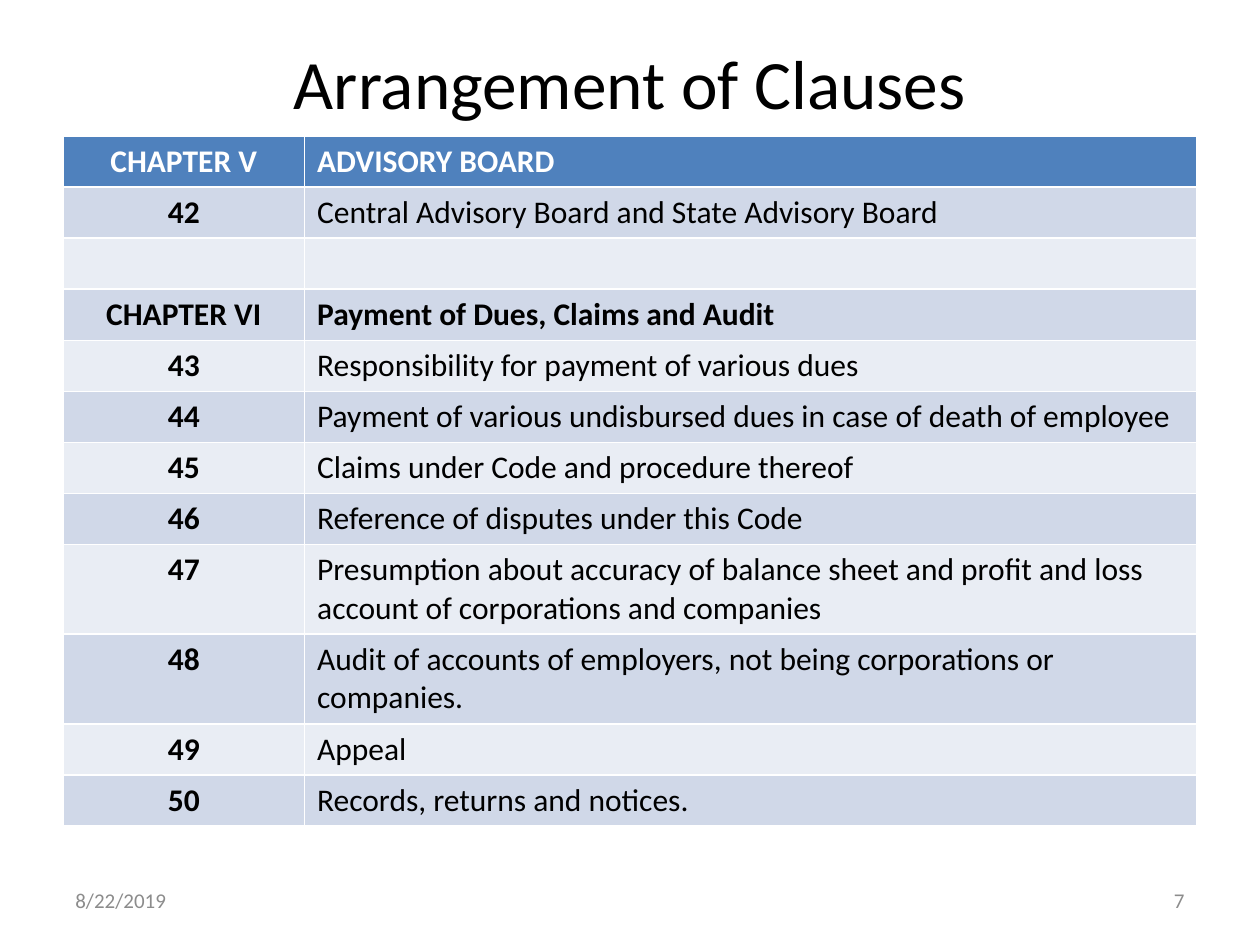
from pptx import Presentation
from pptx.dml.color import RGBColor
from pptx.enum import text
from pptx.util import Cm, Pt

BLACK = RGBColor(0x00, 0x00, 0x00)
WHITE = RGBColor(0xFF, 0xFF, 0xFF)
GREY = RGBColor(0x8C, 0x8C, 0x8C)
BLUE = RGBColor(0x4F, 0x81, 0xBD)
BANDS = RGBColor(0xD0, 0xD8, 0xE8), RGBColor(0xE9, 0xED, 0xF4)

LEFT, WIDTH = Cm(1.27), Cm(22.86)
ALIGN = text.PP_ALIGN

ROWS = [
    ("CHAPTER V", "ADVISORY BOARD"),
    ("42", "Central Advisory Board and State Advisory Board"),
    ("", ""),
    ("CHAPTER VI", "Payment of Dues, Claims and Audit"),
    ("43", "Responsibility for payment of various dues"),
    ("44", "Payment of various undisbursed dues in case of death of employee"),
    ("45", "Claims under Code and procedure thereof"),
    ("46", "Reference of disputes under this Code"),
    ("47", "Presumption about accuracy of balance sheet and profit and loss "
           "account of corporations and companies"),
    ("48", "Audit of accounts of employers, not being corporations or companies."),
    ("49", "Appeal"),
    ("50", "Records, returns and notices."),
]


def write(frame, words, size=18, color=BLACK, bold=False, align=ALIGN.LEFT):
    para = frame.paragraphs[0]
    para.alignment = align
    if not words:
        return
    run = para.add_run()
    run.text = words
    font = run.font
    font.name, font.size, font.bold = "Calibri", Pt(size), bold
    font.color.rgb = color


def add_title(slide, left, top, width, height):
    title = slide.shapes.title
    title.left, title.top, title.width, title.height = left, top, width, height
    title.text_frame.vertical_anchor = text.MSO_ANCHOR.MIDDLE
    write(title.text_frame, "Arrangement of Clauses", size=39.6, align=ALIGN.CENTER)


def add_clauses(slide, left, top, width, row_height):
    table = slide.shapes.add_table(
        len(ROWS), 2, left, top, width, row_height * len(ROWS)).table
    first = Cm(4.87)
    table.columns[0].width, table.columns[1].width = first, width - first
    for i, row in enumerate(ROWS):
        head = i == 0
        chapter = row[0].startswith("CHAPTER")
        for j, words in enumerate(row):
            cell = table.cell(i, j)
            cell.fill.solid()
            cell.fill.fore_color.rgb = BLUE if head else BANDS[(i - 1) % 2]
            write(cell.text_frame, words, color=WHITE if head else BLACK,
                  bold=chapter or j == 0,
                  align=ALIGN.LEFT if j else ALIGN.CENTER)


def add_footer(slide, left, top, width, height):
    part = Cm(5.93)
    # Date at the left edge, page number at the right edge
    for x, words, align in ((left, "8/22/2019", ALIGN.LEFT),
                            (left + width - part, "7", ALIGN.RIGHT)):
        frame = slide.shapes.add_textbox(x, top, part, height).text_frame
        frame.word_wrap = True
        frame.vertical_anchor = text.MSO_ANCHOR.MIDDLE
        write(frame, words, size=12, color=GREY, align=align)


def main():
    deck = Presentation()
    deck.slide_width, deck.slide_height = Cm(25.4), Cm(19.05)
    slide = deck.slides.add_slide(deck.slide_layouts[5])  # Title Only
    add_title(slide, LEFT, Cm(0.76), WIDTH, Cm(1.78))
    add_clauses(slide, LEFT, Cm(2.74), WIDTH, Cm(1.03))
    add_footer(slide, LEFT, Cm(17.65), WIDTH, Cm(1.01))
    deck.save("out.pptx")


if __name__ == "__main__":
    main()
